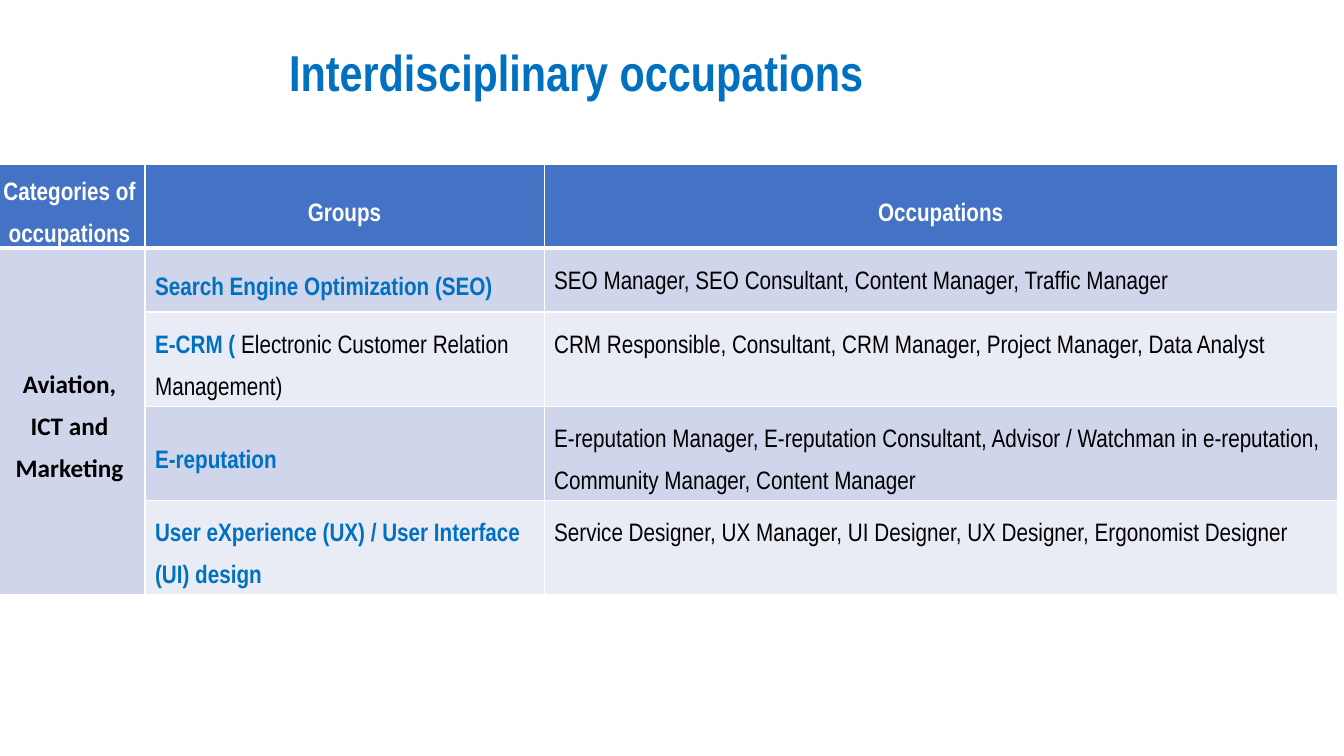
from lxml import etree
from pptx import Presentation
from pptx.dml.color import RGBColor
from pptx.enum.text import MSO_ANCHOR, MSO_AUTO_SIZE, PP_ALIGN
from pptx.oxml.ns import qn
from pptx.util import Inches, Pt

CENTER, LEFT = PP_ALIGN.CENTER, PP_ALIGN.LEFT
MIDDLE, TOP = MSO_ANCHOR.MIDDLE, MSO_ANCHOR.TOP

BLUE, BLACK, WHITE = "0070C0", "000000", "FFFFFF"
HEADER_FILL, BAND_FILLS = "4472C4", ("CFD5EA", "E9EBF5")
NARROW, CATEGORY_FONT = "Arial Narrow", "Calibri"

TITLE = "Interdisciplinary occupations"
HEADINGS = ["Categories of occupations", "Groups", "Occupations"]
CATEGORY = "Aviation, ICT and Marketing"
# Group name in bold, its explanation in plain text, its occupations
GROUPS = [
    ("Search Engine Optimization (SEO)", "",
     "SEO Manager, SEO Consultant, Content Manager, Traffic Manager"),
    ("E-CRM ( ", "Electronic Customer Relation Management)",
     "CRM Responsible, Consultant, CRM Manager, Project Manager, Data Analyst"),
    ("E-reputation", "",
     "E-reputation Manager, E-reputation Consultant, Advisor / Watchman in "
     "e-reputation, Community Manager, Content Manager"),
    ("User eXperience (UX) / User Interface (UI) design", "",
     "Service Designer, UX Manager, UI Designer, UX Designer, Ergonomist Designer"),
]

TITLE_BOX = (279, 36, 648, 72)
TABLE_LEFT, TABLE_TOP = -6, 164
COLUMN_WIDTHS = (151, 399, 793)
ROW_HEIGHTS = (84, 64, 94, 94, 94)
HEADER_INSET = 7


def px(length):
    return round(length * 914400 / 100.8)


def color(value):
    return RGBColor.from_string(value)


def add_run(paragraph, text, size, ink, bold=True, font=NARROW):
    run = paragraph.add_run()
    run.text = text
    run.font.size = Pt(size)
    run.font.name = font
    run.font.bold = bold
    run.font.color.rgb = color(ink)


def format_cell(cell, fill, bottom_width=1):
    """Draw white borders, then the fill, in the order the schema asks for."""
    properties = cell._tc.get_or_add_tcPr()
    for side, width in (("L", 1), ("R", 1), ("T", 1), ("B", bottom_width)):
        border = etree.SubElement(properties, qn(f"a:ln{side}"), w=str(Pt(width)))
        solid = etree.SubElement(border, qn("a:solidFill"))
        etree.SubElement(solid, qn("a:srgbClr"), val=WHITE)
    cell.fill.solid()
    cell.fill.fore_color.rgb = color(fill)


def write_cell(cell, runs, align=LEFT, anchor=MIDDLE):
    cell.vertical_anchor = anchor
    paragraph = cell.text_frame.paragraphs[0]
    paragraph.alignment = align
    paragraph.line_spacing = Pt(30)
    for text, ink, bold, font in runs:
        add_run(paragraph, text, 18, ink, bold, font)


def add_title(slide):
    title = slide.shapes.title
    title.left, title.top, title.width, title.height = map(px, TITLE_BOX)
    frame = title.text_frame
    frame.word_wrap = True
    frame.auto_size = MSO_AUTO_SIZE.SHAPE_TO_FIT_TEXT
    frame.vertical_anchor = TOP
    paragraph = frame.paragraphs[0]
    paragraph.alignment = LEFT
    paragraph.line_spacing = 1.0
    paragraph.space_before = Pt(0)
    add_run(paragraph, TITLE, 36, BLUE)


def add_occupations(slide):
    table = slide.shapes.add_table(
        len(ROW_HEIGHTS), len(COLUMN_WIDTHS), px(TABLE_LEFT), px(TABLE_TOP),
        px(sum(COLUMN_WIDTHS)), px(sum(ROW_HEIGHTS))).table
    for column, width in zip(table.columns, COLUMN_WIDTHS):
        column.width = px(width)
    for row, height in zip(table.rows, ROW_HEIGHTS):
        row.height = px(height)

    for index, heading in enumerate(HEADINGS):
        cell = table.cell(0, index)
        cell.margin_left = cell.margin_right = px(HEADER_INSET)
        cell.margin_top = cell.margin_bottom = 0
        format_cell(cell, HEADER_FILL, bottom_width=3)
        write_cell(cell, [(heading, WHITE, True, NARROW)], CENTER)

    for row, (group, explanation, occupations) in enumerate(GROUPS, 1):
        band = BAND_FILLS[(row - 1) % 2]
        for index, fill in enumerate((BAND_FILLS[0], band, band)):
            format_cell(table.cell(row, index), fill)
        group_runs = [(group, BLUE, True, NARROW)]
        if explanation:
            group_runs.append((explanation, BLACK, False, NARROW))
        write_cell(table.cell(row, 1), group_runs)
        write_cell(table.cell(row, 2), [(occupations, BLACK, False, NARROW)], anchor=TOP)

    category = table.cell(1, 0)
    category.merge(table.cell(len(GROUPS), 0))
    write_cell(category, [(CATEGORY, BLACK, True, CATEGORY_FONT)], CENTER)


def main():
    deck = Presentation()
    deck.slide_width, deck.slide_height = Inches(13.33), Inches(7.5)
    slide = deck.slides.add_slide(deck.slide_layouts[5])
    add_occupations(slide)
    add_title(slide)
    deck.save("out.pptx")


if __name__ == "__main__":
    main()
